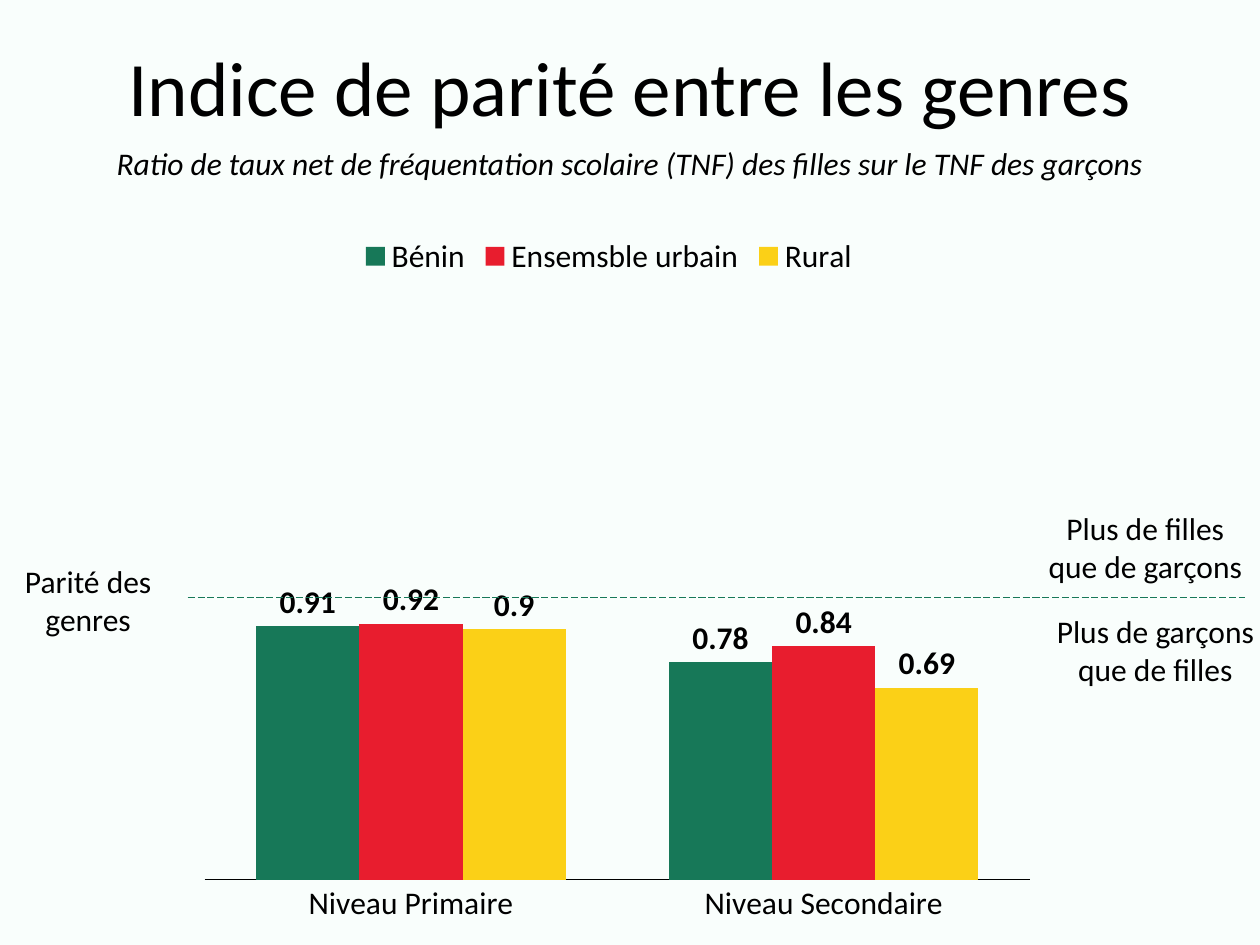
from lxml import etree
from pptx import Presentation
from pptx.chart.data import CategoryChartData
from pptx.dml.color import RGBColor
from pptx.enum.chart import XL_CHART_TYPE, XL_LABEL_POSITION, XL_LEGEND_POSITION, XL_TICK_MARK
from pptx.enum.dml import MSO_LINE
from pptx.enum.shapes import MSO_CONNECTOR
from pptx.enum.text import MSO_ANCHOR, PP_ALIGN
from pptx.oxml import parse_xml
from pptx.oxml.ns import nsdecls, qn
from pptx.util import Inches, Pt

COLUMN = XL_CHART_TYPE.COLUMN_CLUSTERED
OUTSIDE = XL_LABEL_POSITION.OUTSIDE_END
TOP = XL_LEGEND_POSITION.TOP
NO_TICK = XL_TICK_MARK.NONE
DASH = MSO_LINE.LONG_DASH
STRAIGHT = MSO_CONNECTOR.STRAIGHT
MIDDLE = MSO_ANCHOR.MIDDLE
CENTER = PP_ALIGN.CENTER

# Content
HEX = {"back": "F9FEFC", "text": "000000", "green": "177858",
       "red": "E81D2E", "gold": "FBD017"}
FACE = "Calibri"
TITLE = "Indice de parité entre les genres"
NOTES = [  # text, box, format
    ("Ratio de taux net de fréquentation scolaire (TNF) des filles sur le TNF des garçons",
     (0, 1.09, 10, 0.4), {"italic": True}),
    ("Parité des genres", (0.02, 4.41, 1.36, 0.71), {}),
    ("Plus de filles que de garçons", (8.17, 3.99, 1.84, 0.71), {}),
    ("Plus de garçons que de filles", (8.17, 4.81, 2, 0.71), {}),
]
LEVELS = ["Niveau Primaire", "Niveau Secondaire"]
SERIES = [("Bénin", (0.91, 0.78), "green"),
          ("Ensemsble urbain", (0.92, 0.84), "red"),
          ("Rural", (0.9, 0.69), "gold")]
CHART = (1.49, 1.76, 6.69, 5.74)
PLOT = {"x": 0.02, "y": 0.14, "w": 0.98, "h": 0.77}
PARITY = (1.49, 4.74, 9.88, 4.74)


def rgb(name):
    return RGBColor.from_string(HEX[name])


def style(font, **form):
    for key, val in {"name": FACE, "size": Pt(18), **form}.items():
        setattr(font, key, val)
    font.color.rgb = rgb("text")


def write(frame, text, **form):
    para = frame.paragraphs[0]
    para.alignment = CENTER
    run = para.add_run()
    run.text = text
    style(run.font, **form)
    return para


deck = Presentation()
deck.slide_width, deck.slide_height = Inches(10), Inches(7.5)
slide = deck.slides.add_slide(deck.slide_layouts[5])
fill = slide.background.fill
fill.solid()
fill.fore_color.rgb = rgb("back")

# Title
title = slide.shapes.title
box = {"left": 0, "top": 0, "width": 10, "height": 1.45}
for key, val in box.items():
    setattr(title, key, Inches(val))
title.text_frame.vertical_anchor = MIDDLE
write(title.text_frame, TITLE, size=Pt(44)).line_spacing = 0.9

# Chart
data = CategoryChartData()
data.categories = LEVELS
for name, vals, _ in SERIES:
    data.add_series(name, vals)
chart = slide.shapes.add_chart(COLUMN, *map(Inches, CHART), data).chart
style(chart.font, size=Pt(10))
chart.has_title = False
chart.has_legend = True
chart.legend.position = TOP
chart.legend.include_in_layout = False
style(chart.legend.font)

axis = chart.category_axis
axis.major_tick_mark = axis.minor_tick_mark = NO_TICK
axis.format.line.color.rgb = rgb("text")
axis.format.line.width = Pt(0.75)
style(axis.tick_labels.font)
scale = chart.value_axis
scale.minimum_scale, scale.maximum_scale = 0, 2
scale.has_major_gridlines = False
scale.visible = False

plot = chart.plots[0]
plot.gap_width, plot.overlap = 100, 0
plot.vary_by_categories = False
for bars, (_, _, hue) in zip(plot.series, SERIES):
    bars.format.fill.solid()
    bars.format.fill.fore_color.rgb = rgb(hue)
    marks = bars.data_labels
    marks.show_value = True
    marks.position = OUTSIDE
    style(marks.font, bold=True)

# Fixed place of the plot inside the chart
parts = ['<c:layoutTarget val="inner"/>', '<c:xMode val="edge"/>', '<c:yMode val="edge"/>']
parts += [f'<c:{key} val="{val}"/>' for key, val in PLOT.items()]
area = chart._chartSpace.chart.plotArea
for old in area.findall(qn("c:layout")):
    area.remove(old)
area.insert(0, parse_xml(f'<c:layout {nsdecls("c")}><c:manualLayout>'
                         f'{"".join(parts)}</c:manualLayout></c:layout>'))

# Parity line
line = slide.shapes.add_connector(STRAIGHT, *map(Inches, PARITY))
line.line.color.rgb = rgb("green")
line.line.width = Pt(0.5)
line.line.dash_style = DASH
etree.SubElement(line._element.spPr, qn("a:effectLst"))

# Subtitle and side notes
for text, place, form in NOTES:
    frame = slide.shapes.add_textbox(*map(Inches, place)).text_frame
    frame.word_wrap = True
    write(frame, text, **form)

deck.save("out.pptx")
